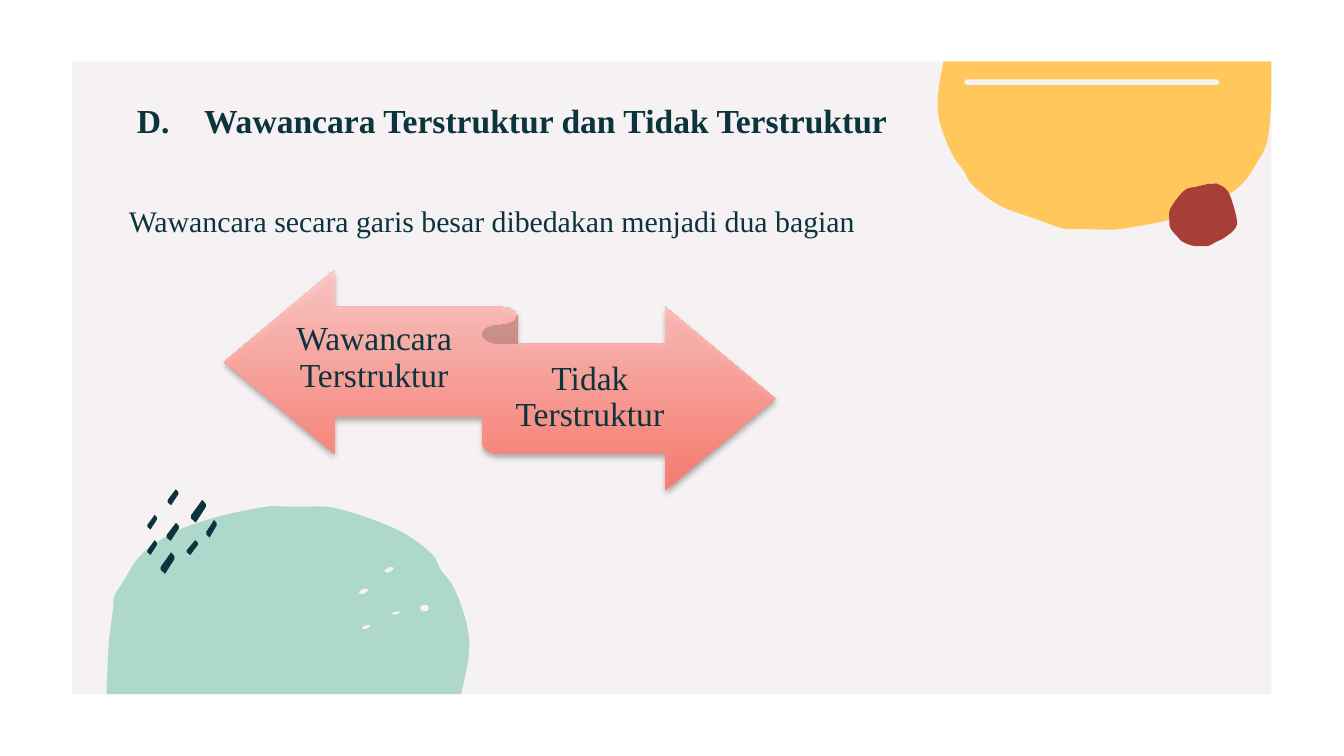
from dataclasses import dataclass
from typing import Any, NamedTuple

from lxml import etree
from pptx import Presentation
from pptx.dml.color import RGBColor
from pptx.enum.shapes import MSO_SHAPE
from pptx.enum.text import MSO_ANCHOR, PP_ALIGN
from pptx.oxml.ns import qn
from pptx.util import Pt

RECTANGLE = MSO_SHAPE.RECTANGLE
ROUNDED = MSO_SHAPE.ROUNDED_RECTANGLE
OVAL = MSO_SHAPE.OVAL
RIBBON = MSO_SHAPE.LEFT_RIGHT_RIBBON
TOP, MIDDLE, BOTTOM = MSO_ANCHOR.TOP, MSO_ANCHOR.MIDDLE, MSO_ANCHOR.BOTTOM
LEFT, CENTER = PP_ALIGN.LEFT, PP_ALIGN.CENTER

PALE = RGBColor(0xF6, 0xF2, 0xF3)
WHITE = RGBColor(0xFF, 0xFF, 0xFF)
YELLOW = RGBColor(0xFF, 0xC7, 0x5C)
GREEN = RGBColor(0xAE, 0xD8, 0xCC)
RED = RGBColor(0xA7, 0x3F, 0x38)
INK = RGBColor(0x0C, 0x34, 0x3D)
CORAL = RGBColor(0xFF, 0x75, 0x69)
BLUSH = RGBColor(0xFF, 0xC7, 0xC4)

WIDTH, HEIGHT = 720, 405
FRAME_SIDE, FRAME_EDGE = 38.9, 33
CURVE_STEPS = 6
Points = list[tuple[float, float]]


class Box(NamedTuple):
    left: float
    top: float
    width: float
    height: float


@dataclass(frozen=True)
class Label:
    text: str
    box: Box
    size: float
    bold: bool
    alignment: Any
    anchor: Any
    inset_x: float
    inset_y: float
    line_spacing: float = 1.0


@dataclass(frozen=True)
class Blob:
    points: Points
    color: RGBColor


YELLOW_BLOB = Blob([
    (506.2, 29.5), (502.6, 49.7), (503.3, 64.8), (509.8, 82.1), (516.2, 91.4),
    (521.3, 99.4), (535.7, 110.2), (555.1, 117.4), (569.5, 122.4), (580, 122.6),
    (594, 123.1), (602, 122.4), (625.7, 118), (647.3, 110.2), (664.6, 99.4),
    (674.6, 85), (678.2, 77.8), (679.7, 71.3), (681.1, 54), (682.6, 29.5),
], YELLOW)
GREEN_BLOB = Blob([
    (57, 372), (58.3, 344.9), (60.5, 326.9), (61.2, 319.7), (65.5, 312.5),
    (76.3, 296.6), (95, 284.4), (118.1, 276.5), (143.3, 271.4), (152.6, 271.4),
    (167, 271.4), (172.8, 271.4), (179.3, 272.2), (194.4, 276.5), (215.3, 285.1),
    (231.1, 296.6), (236.2, 305.3), (243.4, 315.4), (249.8, 333.4),
    (251.3, 349.9), (247, 372),
], GREEN)
RED_BLOB = Blob([
    (650.2, 98.6), (647.3, 98.6), (643.7, 99.4), (640.8, 100.1), (634.3, 102.2),
    (627.1, 111.6), (626.4, 117.4), (627.1, 122.4), (630.7, 126.7),
    (633.6, 129.6), (639.4, 131.8), (644.4, 131.8), (647.3, 131.8),
    (651.6, 129.6), (655.9, 127.4), (661.7, 122.4), (662.4, 116.6),
    (658.1, 103), (652.3, 98.6), (650.2, 98.6),
], RED)

DASH_OUTLINE = [(0.75, 0), (0.05, 0.68), (0.05, 0.82), (0.35, 1), (0.97, 0.32), (0.97, 0.18)]
FLECK_OUTLINE = [(0.65, 0), (0.3, 0.2), (0, 0.7), (0.1, 0.95), (0.35, 1),
                 (0.7, 0.8), (1, 0.3), (0.9, 0.05)]
DASHES = [
    Box(101.9, 267.8, 8.6, 12.2), Box(89.5, 262.1, 6.3, 8.6), Box(99.7, 289.4, 6.5, 7.9),
    Box(78.7, 275.8, 5.6, 7.9), Box(78.7, 289.4, 5.6, 7.9), Box(88.9, 280.1, 7.2, 9.7),
    Box(85.7, 295.9, 8, 11.5), Box(110.2, 278.6, 6, 9.4),
]
FLECKS = [
    Box(193.9, 334.8, 4.5, 2.2), Box(192.3, 315.4, 5, 2.9),
    Box(209.9, 327.6, 4.3, 1.7), Box(206, 303.8, 5, 2.9),
]
FRAME = [
    Box(0, 0, WIDTH, FRAME_EDGE),
    Box(0, HEIGHT - FRAME_EDGE, WIDTH, FRAME_EDGE),
    Box(0, 0, FRAME_SIDE, HEIGHT),
    Box(WIDTH - FRAME_SIDE, 0, FRAME_SIDE, HEIGHT),
]
LABELS = [
    Label("D.\tWawancara Terstruktur dan Tidak Terstruktur",
          Box(20.2, 36.7, 508.3, 45.4), 18, True, CENTER, BOTTOM, 7.2, 7.2),
    Label("Wawancara secara garis besar dibedakan menjadi dua bagian",
          Box(61.9, 101.5, 538.6, 209.5), 16, False, LEFT, TOP, 7.2, 7.2),
    Label("Wawancara Terstruktur",
          Box(145.4, 167, 110.2, 49.7), 18, False, CENTER, MIDDLE, 0, 5, 0.9),
    Label("Tidak Terstruktur",
          Box(258.5, 184.3, 115.2, 57.6), 18, False, CENTER, MIDDLE, 0, 5, 0.9),
]


def set_all(target: Any, values: dict[str, Any]) -> None:
    for name, value in values.items():
        setattr(target, name, value)


def in_points(box: Box) -> list[Pt]:
    return [Pt(value) for value in box]


def paint(shape: Any, color: RGBColor) -> None:
    shape.shadow.inherit = False
    shape.fill.solid()
    shape.fill.fore_color.rgb = color
    shape.line.fill.background()


def smooth(points: Points) -> Points:
    padded = [points[0], *points, points[-1]]
    curve = [points[0]]
    for a, b, c, d in zip(padded, padded[1:], padded[2:], padded[3:]):
        for step in range(1, CURVE_STEPS + 1):
            t = step / CURVE_STEPS
            weights = (-t + 2 * t**2 - t**3, 2 - 5 * t**2 + 3 * t**3,
                       t + 4 * t**2 - 3 * t**3, t**3 - t**2)
            x, y = (sum(w * p[axis] for w, p in zip(weights, (a, b, c, d))) / 2
                    for axis in (0, 1))
            curve.append((x, y))
    return curve


def draw_outline(slide: Any, points: Points, color: RGBColor) -> None:
    vertices = [(Pt(x), Pt(y)) for x, y in points]
    builder = slide.shapes.build_freeform(*vertices[0])
    builder.add_line_segments(vertices[1:], close=True)
    paint(builder.convert_to_shape(), color)


def draw_mark(slide: Any, box: Box, outline: Points, color: RGBColor) -> None:
    points = [(box.left + x * box.width, box.top + y * box.height) for x, y in outline]
    draw_outline(slide, points, color)


def draw_preset(slide: Any, kind: Any, box: Box, color: RGBColor) -> Any:
    shape = slide.shapes.add_shape(kind, *in_points(box))
    paint(shape, color)
    return shape


def draw_ribbon(slide: Any, box: Box) -> None:
    shape = draw_preset(slide, RIBBON, box, CORAL)
    shape.fill.gradient()
    shape.fill.gradient_angle = 90
    for stop, color, position in zip(shape.fill.gradient_stops, (CORAL, BLUSH), (0, 1)):
        stop.color.rgb = color
        stop.position = position
    properties = shape.element.spPr
    for color_element in properties.iter(qn("a:srgbClr")):
        etree.SubElement(color_element, qn("a:alpha"), val="90000")
    shadow = etree.SubElement(
        properties.find(qn("a:effectLst")), qn("a:outerShdw"),
        blurRad=str(Pt(3.1)), dist=str(Pt(1.8)), dir="5400000", rotWithShape="0")
    shadow_color = etree.SubElement(shadow, qn("a:srgbClr"), val="000000")
    etree.SubElement(shadow_color, qn("a:alpha"), val="35000")


def draw_label(slide: Any, label: Label) -> None:
    frame = slide.shapes.add_textbox(*in_points(label.box)).text_frame
    set_all(frame, {
        "word_wrap": True, "vertical_anchor": label.anchor,
        "margin_left": Pt(label.inset_x), "margin_right": Pt(label.inset_x),
        "margin_top": Pt(label.inset_y), "margin_bottom": Pt(label.inset_y)})
    paragraph = frame.paragraphs[0]
    set_all(paragraph, {"alignment": label.alignment, "line_spacing": label.line_spacing})
    run = paragraph.add_run()
    run.text = label.text
    set_all(run.font, {"name": "Times New Roman", "size": Pt(label.size), "bold": label.bold})
    run.font.color.rgb = INK


def main() -> None:
    presentation = Presentation()
    set_all(presentation, {"slide_width": Pt(WIDTH), "slide_height": Pt(HEIGHT)})
    slide = presentation.slides.add_slide(presentation.slide_layouts[6])
    slide.background.fill.solid()
    slide.background.fill.fore_color.rgb = PALE
    for blob in (YELLOW_BLOB, GREEN_BLOB, RED_BLOB):
        draw_outline(slide, smooth(blob.points), blob.color)
    bar = draw_preset(slide, ROUNDED, Box(516.7, 42.5, 136.4, 3), PALE)
    bar.adjustments[0] = 0.5
    for box in FLECKS:
        draw_mark(slide, box, FLECK_OUTLINE, PALE)
    draw_preset(slide, OVAL, Box(225, 324, 4.7, 3.6), PALE)
    for box in DASHES:
        draw_mark(slide, box, DASH_OUTLINE, INK)
    for box in FRAME:
        draw_preset(slide, RECTANGLE, box, WHITE)
    draw_ribbon(slide, Box(120.2, 144.7, 295.2, 118.1))
    for label in LABELS:
        draw_label(slide, label)
    presentation.save("out.pptx")


if __name__ == "__main__":
    main()
